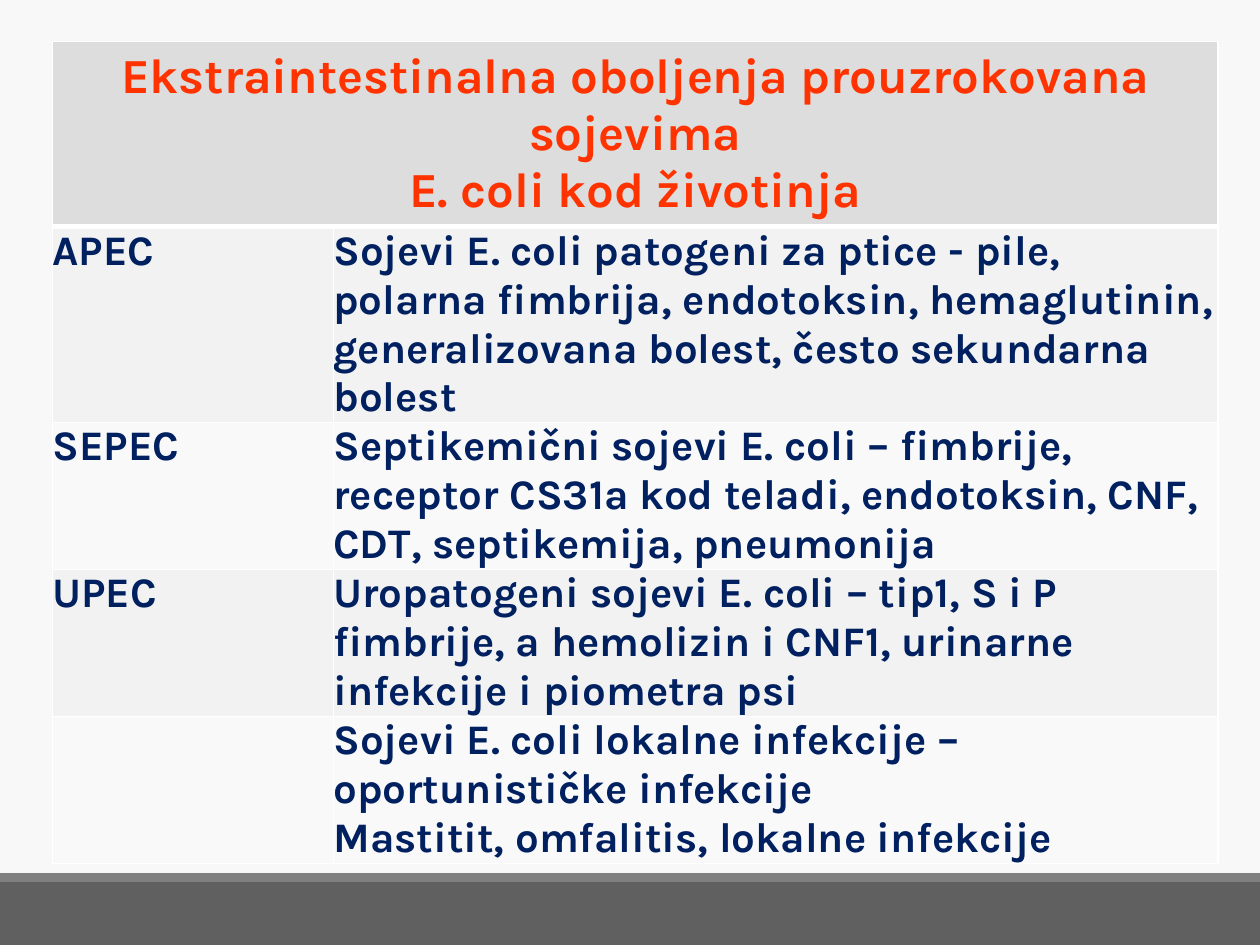
from pptx import Presentation
from pptx.dml.color import RGBColor
from pptx.enum.shapes import MSO_SHAPE
from pptx.enum.text import PP_ALIGN
from pptx.oxml import parse_xml
from pptx.oxml.ns import nsdecls
from pptx.util import Cm, Pt

RECT = MSO_SHAPE.RECTANGLE
LEFT, MID = PP_ALIGN.LEFT, PP_ALIGN.CENTER
WIDE, HIGH = 25.4, 19.05
FONT = "Karla"

HEAD = ["Ekstraintestinalna oboljenja prouzrokovana sojevima",
        "E. coli kod životinja"]
ROWS = [
    ("APEC", ["Sojevi E. coli patogeni za ptice - pile, polarna fimbrija, "
              "endotoksin, hemaglutinin, generalizovana bolest, "
              "često sekundarna bolest"]),
    ("SEPEC", ["Septikemični sojevi E. coli – fimbrije, receptor CS31a kod "
               "teladi, endotoksin, CNF, CDT, septikemija, pneumonija"]),
    ("UPEC", ["Uropatogeni sojevi E. coli – tip1, S i P fimbrije, a hemolizin "
              "i CNF1, urinarne infekcije i piometra psi"]),
    ("", ["Sojevi E. coli lokalne infekcije – oportunističke infekcije",
          "Mastitit, omfalitis, lokalne infekcije"]),
]


def paint(fill, color):
    fill.solid()
    fill.fore_color.rgb = RGBColor.from_string(color)


def write(frame, lines, size=24, color="002060", align=LEFT):
    for i, line in enumerate(lines):
        para = frame.paragraphs[0] if i == 0 else frame.add_paragraph()
        para.alignment = align
        run = para.add_run()
        run.text = line
        font = run.font
        font.name, font.size, font.bold = FONT, Pt(size), True
        font.color.rgb = RGBColor.from_string(color)


def style(cell, color, base=1, pad=(0, 0)):
    """Set the borders, fill and margins of one cell."""
    props = cell._tc.get_or_add_tcPr()
    for side, width in zip("LRTB", (1, 1, 1, base)):
        props.append(parse_xml(
            f'<a:ln{side} {nsdecls("a")} w="{Pt(width)}"><a:solidFill>'
            f'<a:srgbClr val="FFFFFF"/></a:solidFill></a:ln{side}>'))
    paint(cell.fill, color)
    cell.margin_left = cell.margin_right = Cm(pad[0])
    cell.margin_top = cell.margin_bottom = Cm(pad[1])


def footer(slide, left, top, width, height):
    """Dark band with a thin lighter strip along its top."""
    strip = 0.18
    for y, tall, color in ((top + strip, height - strip, "606060"),
                           (top, strip, "808080")):
        bar = slide.shapes.add_shape(RECT, Cm(left), Cm(y), Cm(width), Cm(tall))
        bar.shadow.inherit = False
        paint(bar.fill, color)
        bar.line.fill.background()


def grid(slide, left, top, width, height):
    """Table with a merged heading row and one row for each strain."""
    table = slide.shapes.add_table(len(ROWS) + 1, 2, Cm(left), Cm(top),
                                   Cm(width), Cm(height)).table
    first = 5.66
    for col, size in zip(table.columns, (first, width - first)):
        col.width = Cm(size)
    for row, size in zip(table.rows, (2.64, 2.64, 2.64, 1.75, 1.75)):
        row.height = Cm(size)

    # Heading
    for col in range(2):
        style(table.cell(0, col), "DDDDDD", base=3, pad=(0.25, 0.13))
    head = table.cell(0, 0)
    head.merge(table.cell(0, 1))
    write(head.text_frame, HEAD, size=28, color="FF3300", align=MID)

    # Strains, in alternating bands
    for i, (name, lines) in enumerate(ROWS, 1):
        for col, texts in enumerate(([name] if name else [], lines)):
            cell = table.cell(i, col)
            style(cell, "F2F2F2" if i % 2 else "F9F9F9")
            write(cell.text_frame, texts)


def main():
    deck = Presentation()
    deck.slide_width, deck.slide_height = Cm(WIDE), Cm(HIGH)
    slide = deck.slides.add_slide(deck.slide_layouts[6])
    paint(slide.background.fill, "F8F8F8")
    footer(slide, 0, 17.6, WIDE, HIGH - 17.6)
    grid(slide, 1.06, 0.84, 23.49, 11.42)
    deck.save("out.pptx")


if __name__ == "__main__":
    main()
